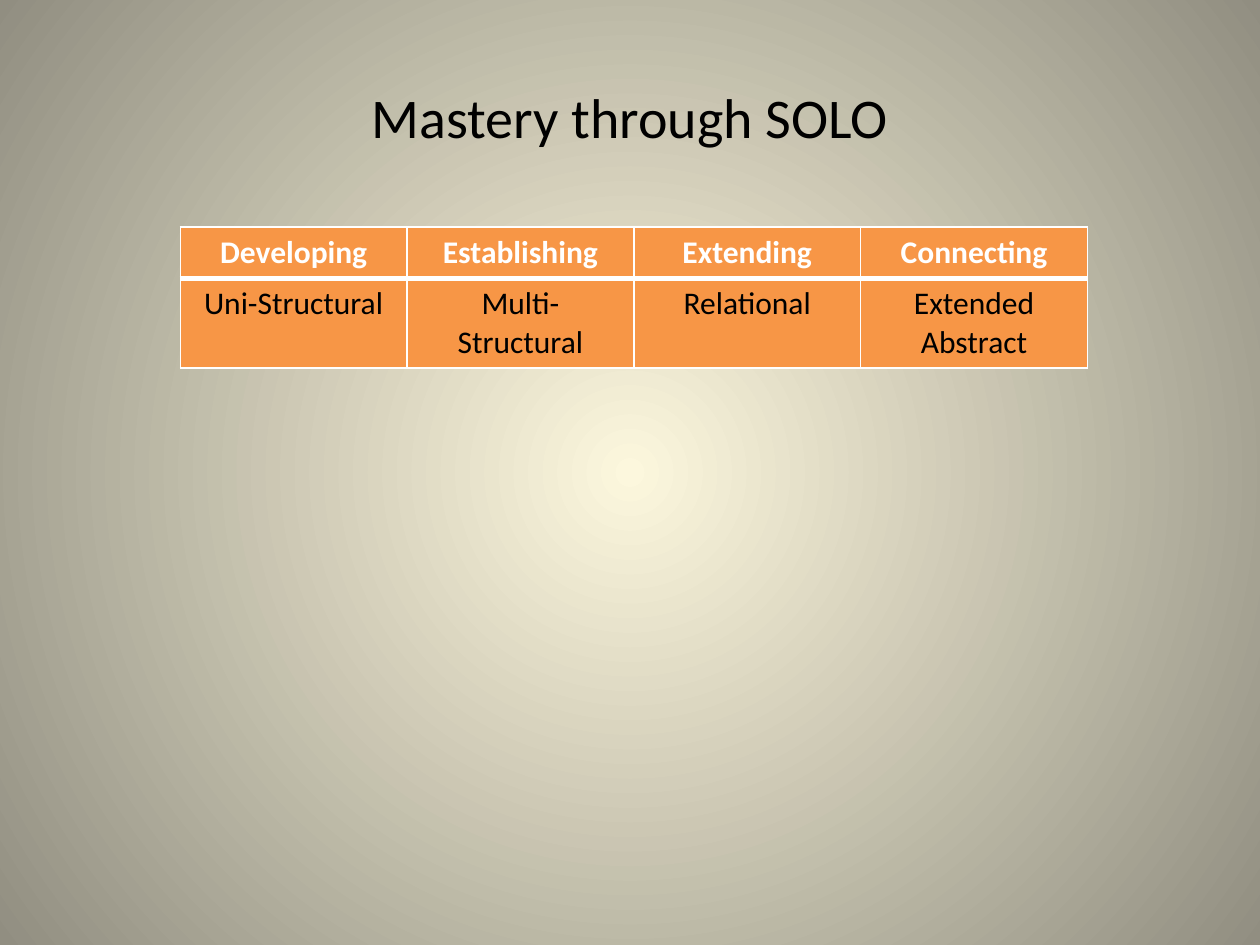
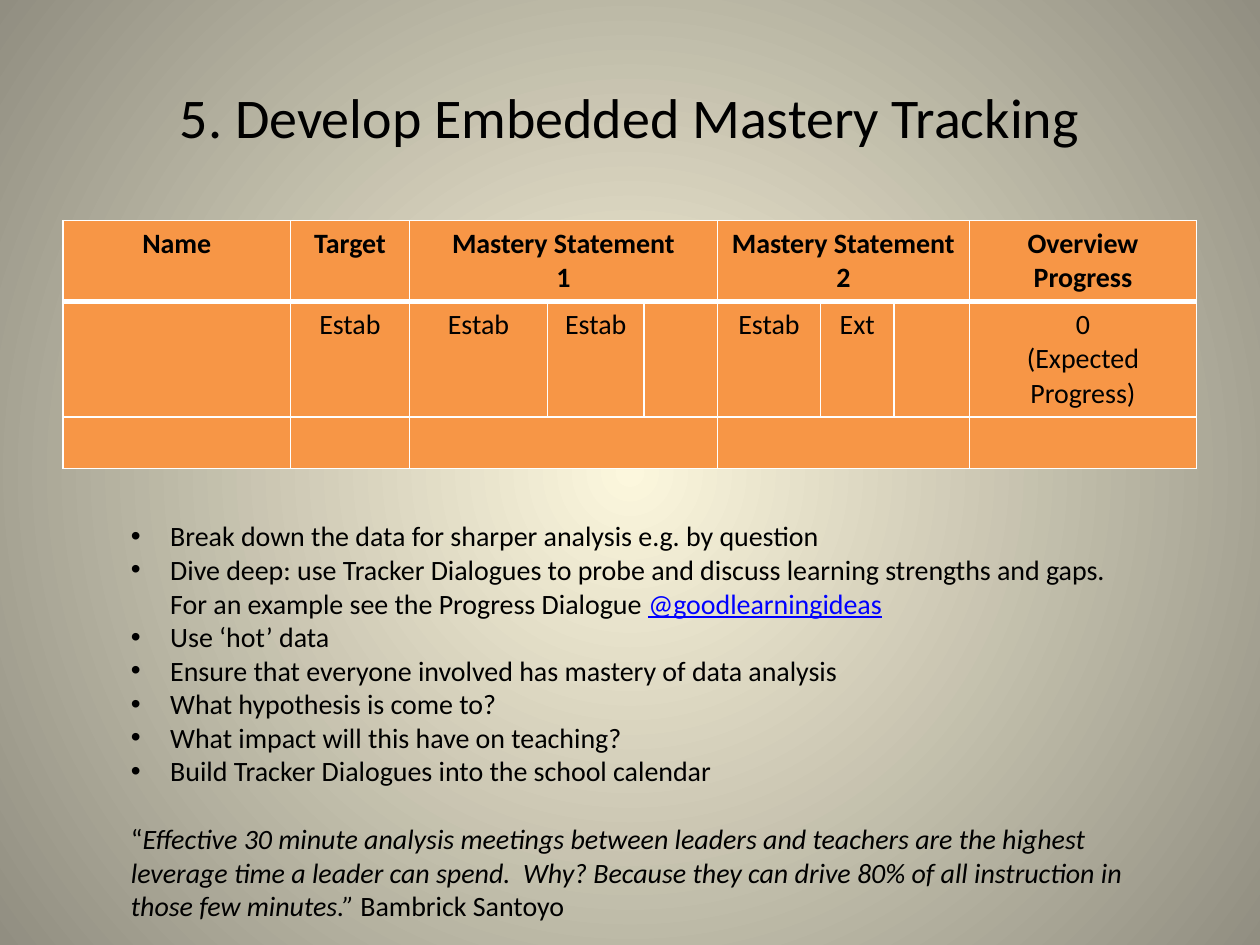
from dataclasses import dataclass

from pptx import Presentation
from pptx.dml.color import RGBColor
from pptx.enum.text import MSO_ANCHOR as Anchor, MSO_AUTO_SIZE as AutoSize, PP_ALIGN as Align
from pptx.oxml import parse_xml
from pptx.oxml.ns import nsdecls, qn
from pptx.util import Pt

BLACK = RGBColor(0x00, 0x00, 0x00)
WHITE = RGBColor(0xFF, 0xFF, 0xFF)
ORANGE = RGBColor(0xF7, 0x96, 0x46)
LINK_BLUE = RGBColor(0x00, 0x00, 0xFF)
CREAM = RGBColor(0xFC, 0xF7, 0xDD)
STONE = RGBColor(0x91, 0x8E, 0x81)
FONT = "Calibri"
TITLE_SIZE = 32
NOTES_SIZE = 16
ROW_HEIGHT = 29.5
THIN, THICK = 1, 3
BULLET_INDENT = 22.5


@dataclass(frozen=True)
class Grid:
    left: float
    top: float
    widths: list[float]
    rows: list[list[str]]
    size: float
    header_color: RGBColor
    merges: tuple[tuple[int, int, int], ...] = ()


@dataclass(frozen=True)
class Span:
    text: str
    color: RGBColor = BLACK
    italic: bool = False
    underline: bool = False


MASTERY_LEVELS = Grid(
    left=103, top=129.6, widths=[129.6] * 4, size=18, header_color=WHITE,
    rows=[
        ["Developing", "Establishing", "Extending", "Connecting"],
        ["Uni-Structural", "Multi-Structural", "Relational", "Extended Abstract"],
    ],
)

TRACKER = Grid(
    left=36, top=126, widths=[130, 68, 79, 55, 42, 59, 42, 43, 130], size=16,
    header_color=BLACK,
    rows=[
        ["Name", "Target", "Mastery Statement\n1", "", "",
         "Mastery Statement\n2", "", "", "Overview\nProgress"],
        ["", "Estab", "Estab", "Estab", "", "Estab", "Ext", "",
         "0\n(Expected Progress)"],
        [""] * 9,
    ],
    merges=((0, 2, 4), (0, 5, 7), (2, 2, 4), (2, 5, 7)),
)

TRACKING_POINTS = [
    [Span("Break down the data for sharper analysis e.g. by question")],
    [Span("Dive deep: use Tracker Dialogues to probe and discuss learning strengths "
          "and gaps.  For an example see the Progress Dialogue "),
     Span("@goodlearningideas", LINK_BLUE, underline=True)],
    [Span("Use ‘hot’ data")],
    [Span("Ensure that everyone involved has mastery of data analysis")],
    [Span("What hypothesis is come to?")],
    [Span("What impact will this have on teaching?")],
    [Span("Build Tracker Dialogues into the school calendar")],
]

QUOTE = [
    Span("“"),
    Span("Effective 30 minute analysis meetings between leaders and teachers are the "
         "highest leverage time a leader can spend.  Why? Because they can drive 80% "
         "of all instruction in those few minutes.” ", italic=True),
    Span("Bambrick Santoyo"),
]


def style_font(font, size: float, color: RGBColor = BLACK, bold: bool = False) -> None:
    font.name = FONT
    font.size = Pt(size)
    font.bold = bold
    font.color.rgb = color


def paint_background(master) -> None:
    fill = master.background.fill
    fill.gradient()
    for stop, color in zip(fill.gradient_stops, (CREAM, STONE)):
        stop.color.rgb = color
    gradient = master.element.cSld.find(".//" + qn("a:gradFill"))
    gradient.remove(gradient.find(qn("a:lin")))
    gradient.append(parse_xml(
        f'<a:path {nsdecls("a")} path="circle">'
        '<a:fillToRect l="50000" t="50000" r="50000" b="50000"/></a:path>'))


def add_titled_slide(presentation, title: str):
    slide = presentation.slides.add_slide(presentation.slide_layouts[5])
    shape = slide.shapes.title
    shape.left, shape.top, shape.width, shape.height = Pt(36), Pt(21.6), Pt(648), Pt(90)
    frame = shape.text_frame
    frame.text = title
    frame.vertical_anchor = Anchor.MIDDLE
    paragraph = frame.paragraphs[0]
    paragraph.alignment = Align.CENTER
    style_font(paragraph.runs[0].font, TITLE_SIZE)
    return slide


def border_cell(cell, top: float, bottom: float) -> None:
    properties = cell._tc.get_or_add_tcPr()
    sides = {"lnL": THIN, "lnR": THIN, "lnT": top, "lnB": bottom}
    for position, (side, width) in enumerate(sides.items()):
        properties.insert(position, parse_xml(
            f'<a:{side} {nsdecls("a")} w="{Pt(width)}"><a:solidFill>'
            f'<a:srgbClr val="{WHITE}"/></a:solidFill></a:{side}>'))


def add_grid(slide, grid: Grid) -> None:
    table = slide.shapes.add_table(
        len(grid.rows), len(grid.widths), Pt(grid.left), Pt(grid.top),
        Pt(sum(grid.widths)), Pt(ROW_HEIGHT * len(grid.rows))).table
    table.horz_banding = False
    for column, width in zip(table.columns, grid.widths):
        column.width = Pt(width)
    for row_index, texts in enumerate(grid.rows):
        table.rows[row_index].height = Pt(ROW_HEIGHT)
        is_header = row_index == 0
        for column_index, text in enumerate(texts):
            cell = table.cell(row_index, column_index)
            cell.fill.solid()
            cell.fill.fore_color.rgb = ORANGE
            border_cell(cell, THICK if row_index == 1 else THIN,
                        THICK if is_header else THIN)
            cell.text_frame.text = text
            for paragraph in cell.text_frame.paragraphs:
                paragraph.alignment = Align.CENTER
                for run in paragraph.runs:
                    style_font(run.font, grid.size,
                               grid.header_color if is_header else BLACK, is_header)
    for row, first, last in grid.merges:
        table.cell(row, first).merge(table.cell(row, last))


def add_spans(paragraph, spans: list[Span]) -> None:
    for span in spans:
        run = paragraph.add_run()
        run.text = span.text
        style_font(run.font, NOTES_SIZE, span.color)
        run.font.italic = span.italic
        run.font.underline = span.underline


def add_bullet(paragraph) -> None:
    properties = paragraph._p.get_or_add_pPr()
    properties.set("marL", str(Pt(BULLET_INDENT)))
    properties.set("indent", str(-Pt(BULLET_INDENT)))
    properties.append(parse_xml(f'<a:buFont {nsdecls("a")} typeface="Arial"/>'))
    properties.append(parse_xml(f'<a:buChar {nsdecls("a")} char="•"/>'))


def add_tracking_notes(slide) -> None:
    frame = slide.shapes.add_textbox(Pt(67.7), Pt(293), Pt(588), Pt(240)).text_frame
    frame.word_wrap = True
    frame.auto_size = AutoSize.SHAPE_TO_FIT_TEXT
    for index, spans in enumerate(TRACKING_POINTS):
        paragraph = frame.add_paragraph() if index else frame.paragraphs[0]
        add_bullet(paragraph)
        add_spans(paragraph, spans)
    quote = frame.add_paragraph()
    quote.space_before = Pt(19.5)
    add_spans(quote, QUOTE)


def main() -> None:
    presentation = Presentation()
    presentation.slide_width, presentation.slide_height = Pt(720), Pt(540)
    paint_background(presentation.slide_master)

    levels_slide = add_titled_slide(presentation, "Mastery through SOLO")
    add_grid(levels_slide, MASTERY_LEVELS)

    tracking_slide = add_titled_slide(presentation, "5. Develop Embedded Mastery Tracking")
    add_grid(tracking_slide, TRACKER)
    add_tracking_notes(tracking_slide)

    presentation.save("out.pptx")


if __name__ == "__main__":
    main()
